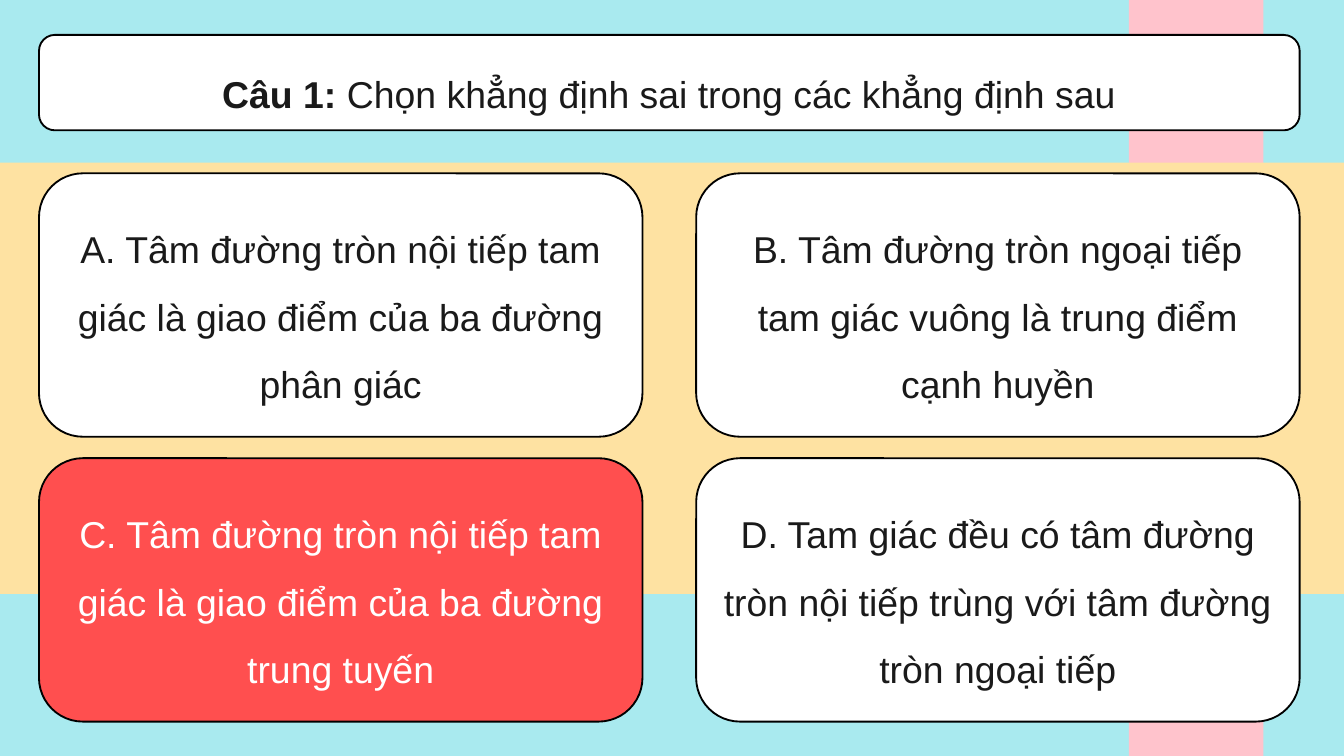
from dataclasses import dataclass

from pptx import Presentation
from pptx.dml.color import RGBColor
from pptx.enum.shapes import MSO_SHAPE as Shape
from pptx.enum.text import MSO_ANCHOR as Anchor, PP_ALIGN as Align
from pptx.util import Inches, Pt


@dataclass(frozen=True)
class Theme:
    sky: RGBColor = RGBColor(0xA9, 0xEA, 0xEF)
    pink: RGBColor = RGBColor(0xFF, 0xC3, 0xCC)
    sand: RGBColor = RGBColor(0xFE, 0xE2, 0xA2)
    white: RGBColor = RGBColor(0xFF, 0xFF, 0xFF)
    red: RGBColor = RGBColor(0xFF, 0x4F, 0x4F)
    ink: RGBColor = RGBColor(0x1A, 0x1A, 0x1A)
    outline: RGBColor = RGBColor(0, 0, 0)
    font: str = "Arial"
    text_size: int = 20


THEME = Theme()
WIDTH = 10
HEIGHT = WIDTH * 9 / 16
MARGIN = 0.29
CARD_WIDTH, CARD_HEIGHT = 4.49, 1.96
CARDS_TOP = 1.29
COLUMN_STEP, ROW_STEP = 4.89, 2.12

QUESTION = [("Câu 1:", True), (" Chọn khẳng định sai trong các khẳng định sau", False)]
ANSWERS = [
    "A. Tâm đường tròn nội tiếp tam giác là giao điểm của ba đường phân giác",
    "B. Tâm đường tròn ngoại tiếp tam giác vuông là trung điểm cạnh huyền",
    "C. Tâm đường tròn nội tiếp tam giác là giao điểm của ba đường trung tuyến",
    "D. Tam giác đều có tâm đường tròn nội tiếp trùng với tâm đường tròn ngoại tiếp",
]
CHOSEN = 2


def add_filled(page, kind, left, top, width, height, color):
    shape = page.shapes.add_shape(
        kind, Inches(left), Inches(top), Inches(width), Inches(height)
    )
    shape.shadow.inherit = False
    shape.fill.solid()
    shape.fill.fore_color.rgb = color
    return shape


def add_band(page, left, top, width, height, color):
    band = add_filled(page, Shape.RECTANGLE, left, top, width, height, color)
    band.line.fill.background()


def add_card(page, left, top, width, height, spans, fill=THEME.white, ink=THEME.ink):
    card = add_filled(page, Shape.ROUNDED_RECTANGLE, left, top, width, height, fill)
    card.line.color.rgb = THEME.outline
    card.line.width = Pt(1)
    frame = card.text_frame
    frame.word_wrap = True
    frame.vertical_anchor = Anchor.MIDDLE
    para = frame.paragraphs[0]
    para.alignment = Align.CENTER
    para.line_spacing = 1.5
    for text, bold in spans:
        span = para.add_run()
        span.text = text
        span.font.name = THEME.font
        span.font.size = Pt(THEME.text_size)
        span.font.bold = bold
        span.font.color.rgb = ink


def add_answer(page, index, text):
    row, column = divmod(index, 2)
    left = MARGIN + column * COLUMN_STEP
    top = CARDS_TOP + row * ROW_STEP
    colors = (THEME.red, THEME.white) if index == CHOSEN else (THEME.white, THEME.ink)
    add_card(page, left, top, CARD_WIDTH, CARD_HEIGHT, [(text, False)], *colors)


def main():
    deck = Presentation()
    deck.slide_width, deck.slide_height = Inches(WIDTH), Inches(HEIGHT)
    page = deck.slides.add_slide(deck.slide_layouts.get_by_name("Blank"))
    page.background.fill.solid()
    page.background.fill.fore_color.rgb = THEME.sky
    add_band(page, 8.4, 0, 1, HEIGHT, THEME.pink)
    add_band(page, 0, 1.21, WIDTH, 3.21, THEME.sand)
    add_card(page, MARGIN, 0.26, COLUMN_STEP + CARD_WIDTH, 0.71, QUESTION)
    for index, text in enumerate(ANSWERS):
        add_answer(page, index, text)
    deck.save("out.pptx")


if __name__ == "__main__":
    main()
